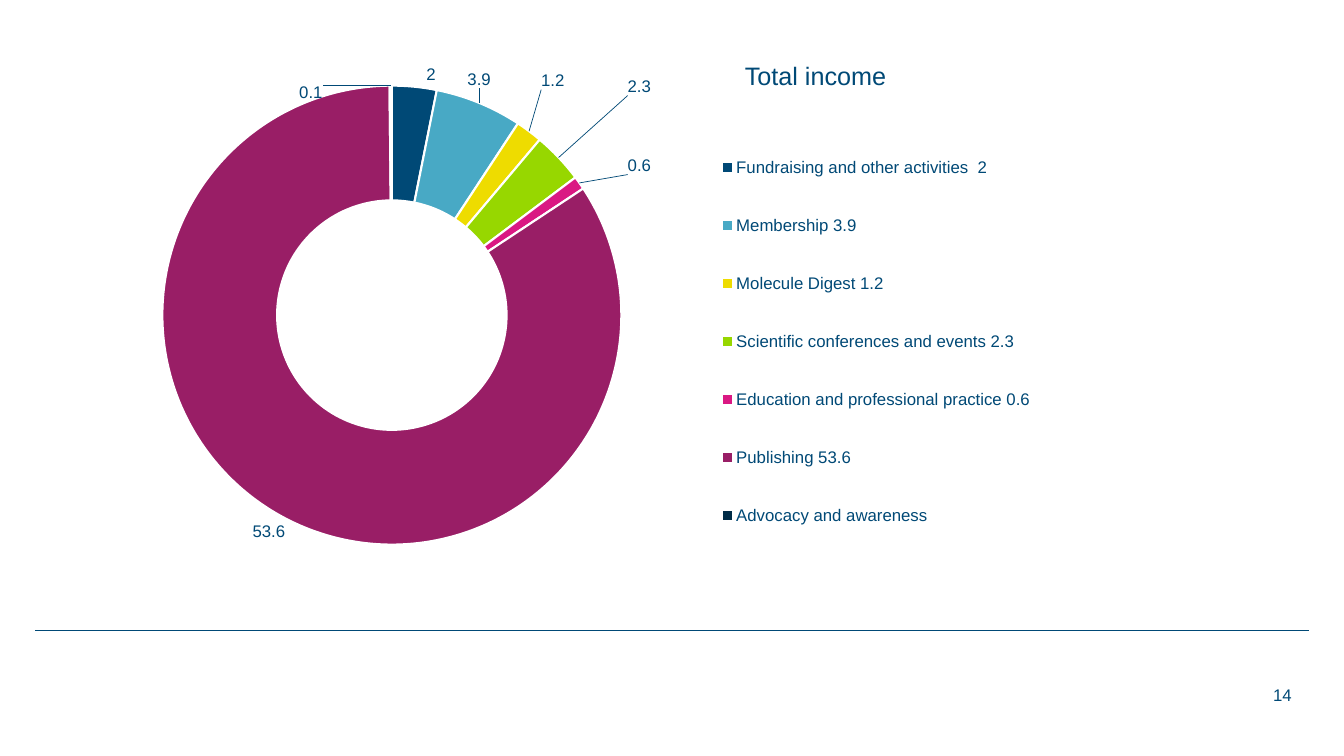
import math
from dataclasses import dataclass
from itertools import accumulate

from lxml import etree
from pptx import Presentation
from pptx import util as u
from pptx.chart.data import CategoryChartData
from pptx.dml.color import RGBColor
from pptx.enum import chart as charts
from pptx.enum import shapes, text
from pptx.oxml.ns import qn


@dataclass(frozen=True)
class Theme:
    font: str = "Arial"
    ink: str = "004976"
    gap: str = "FFFFFF"
    title_size: float = 18
    body_size: float = 12
    rule_width: float = 0.5
    gap_width: float = 1.5


INCOME = [
    ("Fundraising and other activities  2", 2, "004976", (10.85, 1.87)),
    ("Membership 3.9", 3.9, "48A9C5", (12.06, 2.0)),
    ("Molecule Digest 1.2", 1.2, "EEDC00", (13.92, 2.03)),
    ("Scientific conferences and events 2.3", 2.3, "97D700", (16.1, 2.18)),
    ("Education and professional practice 0.6", 0.6, "DA1883", (16.1, 4.17)),
    ("Publishing 53.6", 53.6, "991E66", (6.76, 13.41)),
    ("Advocacy and awareness ", 0.1, "002C47", (7.82, 2.33)),
]
CHART_BOX = (2.34, 1.4, 29.21, 13.56)
RING_CENTRE = (9.86, 7.94)
RING_MIDDLE_RADIUS = 4.34


def set_layout(parent, index, **settings):
    for old in parent.findall(qn("c:layout")):
        parent.remove(old)
    layout = etree.Element(qn("c:layout"))
    manual = etree.SubElement(layout, qn("c:manualLayout"))
    for name, value in settings.items():
        etree.SubElement(manual, qn(f"c:{name}")).set("val", str(value))
    parent.insert(index, layout)


def label_offsets(items):
    values = [value for _, value, _, _ in items]
    total = sum(values)
    for (_, value, _, target), end in zip(items, accumulate(values)):
        angle = 2 * math.pi * (end - value / 2) / total
        x = RING_CENTRE[0] + RING_MIDDLE_RADIUS * math.sin(angle)
        y = RING_CENTRE[1] - RING_MIDDLE_RADIUS * math.cos(angle)
        yield (target[0] - x) / CHART_BOX[2], (target[1] - y) / CHART_BOX[3]


class SlideBuilder:
    def __init__(self, page, theme):
        self.page = page
        self.theme = theme

    def style_font(self, font, size):
        font.name = self.theme.font
        font.size = u.Pt(size)
        font.color.rgb = RGBColor.from_string(self.theme.ink)

    def text(self, words, frame, size, align=text.PP_ALIGN.LEFT, anchor=text.MSO_ANCHOR.TOP):
        box = self.page.shapes.add_textbox(*map(u.Cm, frame))
        box.text_frame.word_wrap = True
        box.text_frame.vertical_anchor = anchor
        box.text_frame.text = words
        para = box.text_frame.paragraphs[0]
        para.alignment = align
        for span in para.runs:
            self.style_font(span.font, size)

    def rule(self, left, right, height):
        line = self.page.shapes.add_connector(
            shapes.MSO_CONNECTOR.STRAIGHT, u.Cm(left), u.Cm(height), u.Cm(right), u.Cm(height)
        )
        line.line.color.rgb = RGBColor.from_string(self.theme.ink)
        line.line.width = u.Pt(self.theme.rule_width)
        etree.SubElement(line._element.spPr, qn("a:effectLst"))

    def leader_lines(self, labels):
        for old in labels.findall(qn("c:showLeaderLines")):
            labels.remove(old)
        etree.SubElement(labels, qn("c:showLeaderLines")).set("val", "1")
        leaders = etree.SubElement(labels, qn("c:leaderLines"))
        line = etree.SubElement(etree.SubElement(leaders, qn("c:spPr")), qn("a:ln"))
        line.set("w", str(u.Pt(self.theme.rule_width)))
        fill = etree.SubElement(line, qn("a:solidFill"))
        etree.SubElement(fill, qn("a:srgbClr")).set("val", self.theme.ink)

    def doughnut(self, items, frame):
        size = self.theme.body_size
        data = CategoryChartData()
        data.categories = [name for name, _, _, _ in items]
        data.add_series("Series 1", [value for _, value, _, _ in items])
        chart = self.page.shapes.add_chart(
            charts.XL_CHART_TYPE.DOUGHNUT, *map(u.Cm, frame), data
        ).chart
        self.style_font(chart.font, size)
        chart.has_title = False
        chart.has_legend = True
        chart.legend.position = charts.XL_LEGEND_POSITION.RIGHT
        chart.legend.include_in_layout = False
        self.style_font(chart.legend.font, size)

        plot = chart.plots[0]
        plot.vary_by_categories = True
        series = plot.series[0]
        series.data_labels.show_value = True
        self.style_font(series.data_labels.font, size)
        for index, (_, _, color, _) in enumerate(items):
            point = series.points[index]
            point.format.fill.solid()
            point.format.fill.fore_color.rgb = RGBColor.from_string(color)
            point.format.line.color.rgb = RGBColor.from_string(self.theme.gap)
            point.format.line.width = u.Pt(self.theme.gap_width)
            self.style_font(point.data_label.font, size)
        self.leader_lines(series.data_labels._element)

        root = chart._chartSpace
        for label, (x, y) in zip(root.iter(qn("c:dLbl")), label_offsets(items)):
            set_layout(label, 1, x=round(x, 4), y=round(y, 4))
        for hole in root.iter(qn("c:holeSize")):
            hole.set("val", "70")
        set_layout(
            next(root.iter(qn("c:plotArea"))), 0, layoutTarget="inner",
            xMode="edge", yMode="edge", x=0.001, y=0.056, w=0.514, h=0.853,
        )
        set_layout(
            next(root.iter(qn("c:legend"))), 1,
            xMode="edge", yMode="edge", x=0.526, y=0.117, w=0.3, h=0.829,
        )


def main():
    deck = Presentation()
    deck.slide_width, deck.slide_height = u.Cm(33.87), u.Cm(19.05)
    theme = Theme()
    builder = SlideBuilder(deck.slides.add_slide(deck.slide_layouts[6]), theme)
    builder.rule(0.89, 32.99, 15.89)
    builder.text("14", (31.7, 16.92, 1.24, 1.19), theme.body_size,
                 text.PP_ALIGN.CENTER, text.MSO_ANCHOR.MIDDLE)
    builder.doughnut(INCOME, CHART_BOX)
    builder.text("Total income", (18.52, 1.4, 4.75, 1.8), theme.title_size)
    deck.save("out.pptx")


if __name__ == "__main__":
    main()
